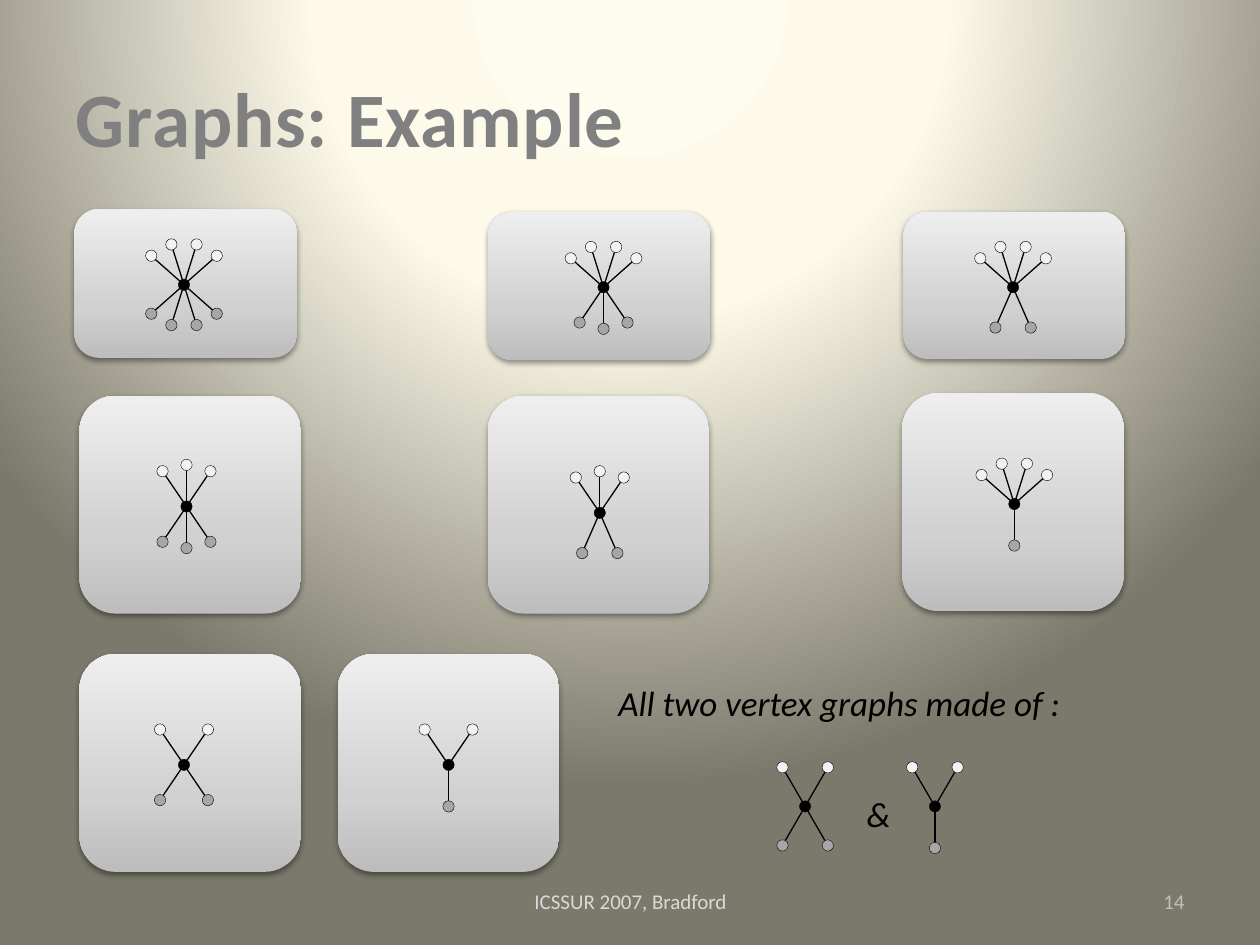
from dataclasses import dataclass

from lxml import etree
from pptx import Presentation
from pptx.dml.color import RGBColor
from pptx.enum.shapes import MSO_CONNECTOR, MSO_SHAPE
from pptx.enum.text import MSO_ANCHOR, PP_ALIGN
from pptx.oxml import parse_xml
from pptx.oxml.ns import nsdecls, qn
from pptx.util import Inches, Pt

LEFT, CENTER, RIGHT = PP_ALIGN.LEFT, PP_ALIGN.CENTER, PP_ALIGN.RIGHT
MIDDLE = MSO_ANCHOR.MIDDLE
CARD_SHAPE, DOT_SHAPE = MSO_SHAPE.ROUNDED_RECTANGLE, MSO_SHAPE.OVAL
STRAIGHT = MSO_CONNECTOR.STRAIGHT

FONT = "Calibri"
BLACK, WHITE_DOT, GREY_DOT, DOT_LINE = "000000", "F2F2F2", "A6A6A6", "0D0D0D"
DOT_SIZE = 0.09
PAGE_STOPS = ((0, "FEFCEE"), (40, "FDFAEA"), (100, "7B796B"))
CARD_STOPS = ((0, "BDBDBD"), (35, "D1D1D1"), (100, "EEEEEE"))
PAGE_DIRECTION = ('<a:path path="circle"><a:fillToRect l="50000" t="-80000" '
                  'r="50000" b="180000"/></a:path>')
CARD_DIRECTION = '<a:lin ang="16200000" scaled="0"/>'

# Half fans: (sideways, away from the vertex); each is mirrored left and right
FOUR = ((0.26, 0.23), (0.10, 0.32))
THREE = ((0.19, 0.28), (0, 0.33))
TWO_WIDE = ((0.19, 0.28),)
TWO_NARROW = ((0.14, 0.32),)
TWO_TALL = ((0.18, 0.31),)
ONE = ((0, 0.33),)


@dataclass
class Graph:
    x: float
    y: float
    upper: tuple
    lower: tuple


@dataclass
class Label:
    text: str
    place: tuple
    size: int
    color: str
    align: int = LEFT
    italic: bool = False


# Left, top, width, height
CARDS = (
    (0.59, 1.66, 1.77, 1.18), (3.87, 1.68, 1.77, 1.18), (7.17, 1.68, 1.76, 1.17),
    (0.63, 3.14, 1.76, 1.73), (3.87, 3.14, 1.76, 1.73), (7.16, 3.12, 1.76, 1.73),
    (0.63, 5.19, 1.76, 1.73), (2.68, 5.19, 1.76, 1.73),
)
GRAPHS = (
    Graph(1.46, 2.26, FOUR, FOUR),
    Graph(4.79, 2.28, FOUR, THREE),
    Graph(8.04, 2.28, FOUR, TWO_NARROW),
    Graph(1.48, 4.02, THREE, THREE),
    Graph(4.76, 4.07, THREE, TWO_NARROW),
    Graph(8.05, 4.00, FOUR, ONE),
    Graph(1.46, 6.07, TWO_WIDE, TWO_WIDE),
    Graph(3.56, 6.07, TWO_WIDE, ONE),
    Graph(6.39, 6.40, TWO_TALL, TWO_TALL),
    Graph(7.42, 6.40, TWO_TALL, ONE),
)
LABELS = (
    Label("All two vertex graphs made of :", (4.81, 5.03, 4.54, 1.09), 20, BLACK,
          italic=True),
    Label("&", (6.78, 6.14, 0.47, 0.63), 20, BLACK, italic=True),
    Label("ICSSUR 2007, Bradford", (3.42, 6.95, 3.17, 0.4), 12, "D9D9D9", CENTER),
    Label("14", (7.17, 6.95, 2.33, 0.4), 12, "BFBFBF", RIGHT),
)


def rgb(color: str) -> RGBColor:
    return RGBColor.from_string(color)


def inches(lengths: tuple) -> list:
    return [Inches(length) for length in lengths]


def set_gradient(fill, owner, stops: tuple, direction: str) -> None:
    """Give the fill inside the owner element its stops and direction."""
    fill.gradient()
    old = owner.find(".//" + qn("a:gradFill"))
    stop_xml = "".join(
        f'<a:gs pos="{place * 1000}"><a:srgbClr val="{color}"/></a:gs>'
        for place, color in stops)
    new = parse_xml(f'<a:gradFill {nsdecls("a")} rotWithShape="1">'
                    f'<a:gsLst>{stop_xml}</a:gsLst>{direction}</a:gradFill>')
    old.getparent().replace(old, new)


def add_card(page, place: tuple) -> None:
    card = page.shapes.add_shape(CARD_SHAPE, *inches(place))
    set_gradient(card.fill, card.element.spPr, CARD_STOPS, CARD_DIRECTION)
    card.line.fill.background()
    card.shadow.inherit = False
    card.element.spPr.find(qn("a:effectLst")).append(parse_xml(
        f'<a:outerShdw {nsdecls("a")} blurRad="40000" dist="20000" dir="5400000" '
        'rotWithShape="0"><a:srgbClr val="000000"><a:alpha val="38000"/>'
        '</a:srgbClr></a:outerShdw>'))


def add_dot(page, x: float, y: float, color: str) -> None:
    half = DOT_SIZE / 2
    dot = page.shapes.add_shape(
        DOT_SHAPE, *inches((x - half, y - half, DOT_SIZE, DOT_SIZE)))
    dot.fill.solid()
    dot.fill.fore_color.rgb = rgb(color)
    dot.line.color.rgb = rgb(DOT_LINE)
    dot.line.width = Pt(0.25)
    dot.shadow.inherit = False


def add_edge(page, start: tuple, end: tuple) -> None:
    edge = page.shapes.add_connector(STRAIGHT, *inches(start + end))
    edge.line.color.rgb = rgb(BLACK)
    edge.line.width = Pt(0.75)
    etree.SubElement(edge.element.spPr, qn("a:effectLst"))


def mirrored(half_fan: tuple) -> list:
    return sorted({(side * dx, dy) for dx, dy in half_fan for side in (-1, 1)})


def add_graph(page, graph: Graph) -> None:
    ends = [(graph.x + dx, graph.y + way * dy, color)
            for fan, way, color in ((graph.upper, -1, WHITE_DOT),
                                    (graph.lower, 1, GREY_DOT))
            for dx, dy in mirrored(fan)]
    for x, y, _ in ends:
        add_edge(page, (graph.x, graph.y), (x, y))
    for x, y, color in ends:
        add_dot(page, x, y, color)
    add_dot(page, graph.x, graph.y, BLACK)


def add_span(para, text: str, size: int, color: str):
    span = para.add_run()
    span.text = text
    span.font.name = FONT
    span.font.size = Pt(size)
    span.font.color.rgb = rgb(color)
    return span


def add_label(page, label: Label) -> None:
    box = page.shapes.add_textbox(*inches(label.place))
    box.text_frame.word_wrap = True
    box.text_frame.vertical_anchor = MIDDLE
    para = box.text_frame.paragraphs[0]
    para.alignment = label.align
    add_span(para, label.text, label.size, label.color).font.italic = label.italic


def set_title(page, text: str) -> None:
    title = page.shapes.title
    title.left, title.top, title.width, title.height = inches((0.5, 0.3, 9, 1.25))
    title.text_frame.vertical_anchor = MIDDLE
    para = title.text_frame.paragraphs[0]
    para.alignment = LEFT
    span = add_span(para, text, 44, "FCFCFD")
    span.font.bold = True
    # Letter spacing, slight transparency and a grey outline
    props = span.font._element
    props.set("spc", "50")
    etree.SubElement(props.find(".//" + qn("a:srgbClr")), qn("a:alpha"), val="95000")
    props.insert(0, parse_xml(
        f'<a:ln {nsdecls("a")} w="{Pt(1.06)}"><a:solidFill>'
        '<a:srgbClr val="808080"/></a:solidFill></a:ln>'))


def main() -> None:
    deck = Presentation()
    deck.slide_width, deck.slide_height = Inches(10), Inches(7.5)
    page = deck.slides.add_slide(deck.slide_layouts.get_by_name("Title Only"))
    set_gradient(page.background.fill, page.element, PAGE_STOPS, PAGE_DIRECTION)
    set_title(page, "Graphs: Example")
    for place in CARDS:
        add_card(page, place)
    for graph in GRAPHS:
        add_graph(page, graph)
    for label in LABELS:
        add_label(page, label)
    deck.save("out.pptx")


if __name__ == "__main__":
    main()
